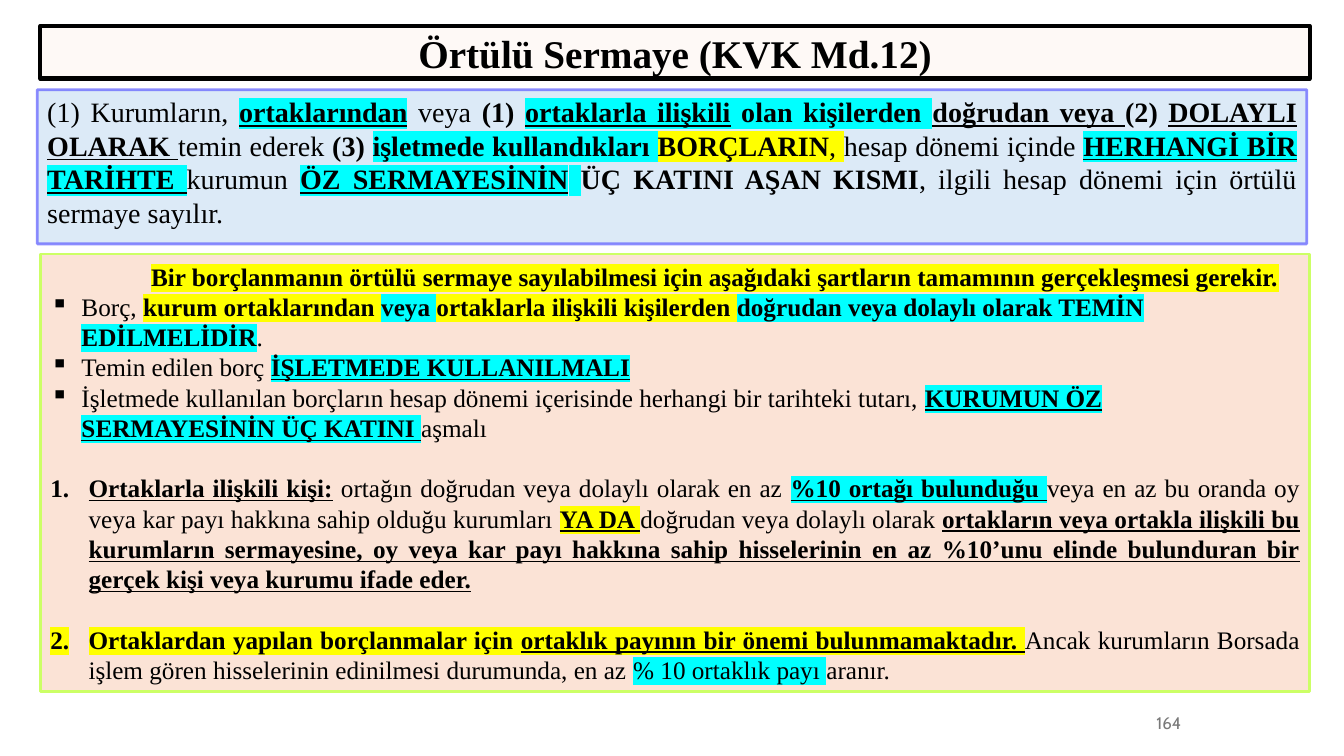
from lxml import etree
from pptx import Presentation
from pptx.dml.color import RGBColor
from pptx.enum.shapes import MSO_SHAPE
from pptx.enum.text import MSO_ANCHOR, PP_ALIGN
from pptx.oxml.ns import qn
from pptx.util import Inches, Pt

RECTANGLE = MSO_SHAPE.RECTANGLE
TOP, MIDDLE = MSO_ANCHOR.TOP, MSO_ANCHOR.MIDDLE
LEFT, CENTER = PP_ALIGN.LEFT, PP_ALIGN.CENTER
RIGHT, JUSTIFY = PP_ALIGN.RIGHT, PP_ALIGN.JUSTIFY
COLUMNS, ROWS = 40, 30
HIGHLIGHTS = {"c": "00FFFF", "y": "FFFF00"}

# Span marks: b bold, u underlined, c cyan highlight, y yellow highlight
LAW = [
    ("(1) Kurumların, ", ""), ("ortaklarından", "buc"), (" veya ", ""),
    ("(1) ", "b"), ("ortaklarla ilişkili", "buc"),
    (" olan kişilerden ", "bc"), ("doğrudan veya ", "bu"), ("(2) ", "b"),
    ("DOLAYLI OLARAK ", "bu"), ("temin ederek ", ""), ("(3) ", "b"),
    ("işletmede kullandıkları", "bc"), (" ", "c"), ("BORÇLARIN", "by"),
    (", ", "y"), ("hesap dönemi içinde ", ""),
    ("HERHANGİ BİR TARİHTE ", "buc"), ("kurumun ", ""),
    ("ÖZ SERMAYESİNİN", "buc"), (" ", "bc"), ("ÜÇ KATINI AŞAN KISMI", "b"),
    (", ilgili hesap dönemi için örtülü sermaye sayılır.", ""),
]
HEADING = [("Bir borçlanmanın örtülü sermaye sayılabilmesi için aşağıdaki "
            "şartların tamamının gerçekleşmesi gerekir.", "by")]
CONDITIONS = [
    [("Borç, ", ""), ("kurum ortaklarından ", "by"), ("veya ", "bc"),
     ("ortaklarla ilişkili kişilerden ", "by"),
     ("doğrudan veya dolaylı olarak TEMİN EDİLMELİDİR", "bc"), (".", "")],
    [("Temin edilen borç ", ""), ("İŞLETMEDE KULLANILMALI", "buc")],
    [("İşletmede kullanılan borçların hesap dönemi içerisinde herhangi bir "
      "tarihteki tutarı, ", ""),
     ("KURUMUN ÖZ SERMAYESİNİN ÜÇ KATINI ", "buc"), ("aşmalı", "")],
]
NOTES = [
    [("Ortaklarla ilişkili kişi:", "bu"),
     (" ortağın doğrudan veya dolaylı olarak en az ", ""),
     ("%10 ortağı bulunduğu ", "buc"),
     ("veya en az bu oranda oy veya kar payı hakkına sahip olduğu "
      "kurumları ", ""),
     ("YA DA ", "buy"), ("doğrudan veya dolaylı olarak ", ""),
     ("ortakların veya ortakla ilişkili bu kurumların sermayesine, oy veya "
      "kar payı hakkına sahip hisselerinin en az %10’unu elinde bulunduran "
      "bir gerçek kişi veya kurumu ifade eder.", "bu")],
    [("Ortaklardan yapılan borçlanmalar için ", "by"),
     ("ortaklık payının bir önemi bulunmamaktadır. ", "buy"),
     ("Ancak kurumların Borsada işlem gören hisselerinin edinilmesi "
      "durumunda, en az ", ""),
     ("% 10 ortaklık payı ", "c"), ("aranır.", "")],
]


def color(value):
    return RGBColor.from_string(value)


def set_alpha(parent, percent):
    """Make the solid colour directly under parent partly transparent."""
    tone = parent.find(qn("a:solidFill")).find(qn("a:srgbClr"))
    etree.SubElement(tone, qn("a:alpha")).set("val", str(percent * 1000))


class SlideBuilder:
    """Places text and boxes on a 40 by 30 grid of the slide."""

    def __init__(self, deck):
        self.slide = deck.slides.add_slide(deck.slide_layouts[6])
        self.column = deck.slide_width / COLUMNS
        self.row = deck.slide_height / ROWS
        self.font = "Times New Roman"
        self.ink = "000000"

    def place(self, left, top, width, height):
        return (round(left * self.column), round(top * self.row),
                round(width * self.column), round(height * self.row))

    def panel(self, area, fill, line, weight, anchor=MIDDLE):
        box = self.slide.shapes.add_shape(RECTANGLE, *self.place(*area))
        box.shadow.inherit = False
        box.fill.solid()
        box.fill.fore_color.rgb = color(fill)
        box.line.color.rgb = color(line)
        box.line.width = Pt(weight)
        return self.prepare(box, anchor)

    def label(self, area, anchor=MIDDLE):
        return self.prepare(
            self.slide.shapes.add_textbox(*self.place(*area)), anchor)

    def prepare(self, box, anchor):
        box.text_frame.word_wrap = True
        box.text_frame.vertical_anchor = anchor
        return box

    def paragraph(self, box, spans, size, align=LEFT, before=0,
                  indent=(0, 0), bullet=None, **style):
        """Fill the empty first paragraph of the box, or add another one."""
        frame = box.text_frame
        first = frame.paragraphs[0]
        para = frame.add_paragraph() if first.runs else first
        para.alignment = align
        para.space_before = Pt(before)
        margin, first_line = indent
        properties = para._p.get_or_add_pPr()
        properties.set("marL", str(Inches(margin)))
        properties.set("indent", str(Inches(first_line)))
        if bullet:
            tag, values = bullet
            mark = etree.SubElement(properties, qn(tag))
            for name, value in values.items():
                mark.set(name, value)
        for text, marks in spans:
            self.span(para, text, marks, size, **style)

    def span(self, para, text, marks, size, font=None, ink=None):
        span = para.add_run()
        span.text = text
        span.font.color.rgb = color(ink or self.ink)
        for mark in marks:
            if mark in HIGHLIGHTS:
                fill = span.font._element.find(qn("a:solidFill"))
                highlight = etree.Element(qn("a:highlight"))
                etree.SubElement(highlight, qn("a:srgbClr")).set(
                    "val", HIGHLIGHTS[mark])
                fill.addnext(highlight)
        format_values = {"name": font or self.font, "size": Pt(size),
                         "bold": "b" in marks, "underline": "u" in marks}
        for name, value in format_values.items():
            setattr(span.font, name, value)


def main():
    deck = Presentation()
    deck.slide_width, deck.slide_height = Inches(13.33), Inches(7.5)
    page = SlideBuilder(deck)

    number = page.label((26, 27.88, 9.45, 1.6))
    page.paragraph(number, [("164", "")], 12, RIGHT, font="Cabin",
                   ink="797979")

    title = page.panel((1.2, 1.04, 37.78, 2.08), "FBE3D6", "000000", 3)
    set_alpha(title.element.spPr, 20)
    page.paragraph(title, [("Örtülü Sermaye (KVK Md.12)", "b")], 28, CENTER)

    law = page.panel((1.11, 3.56, 37.78, 6.12), "DCEAF7", "6666FF", 2, TOP)
    set_alpha(law.element.spPr.find(qn("a:ln")), 74)
    page.paragraph(law, LAW, 20, JUSTIFY)

    terms = page.panel((1.2, 10.08, 37.78, 17.36), "FBE3D6", "CCFF66", 2)
    page.paragraph(terms, HEADING, 18, indent=(0, 1))
    for condition in CONDITIONS:
        page.paragraph(terms, condition, 18, indent=(0.31, -0.31),
                       bullet=("a:buChar", {"char": "▪"}))
    for start, note in enumerate(NOTES, 1):
        numbering = {"type": "arabicPeriod", "startAt": str(start)}
        page.paragraph(terms, note, 18, JUSTIFY, before=21.6,
                       indent=(0.38, -0.38),
                       bullet=("a:buAutoNum", numbering))

    deck.save("out.pptx")


if __name__ == "__main__":
    main()
